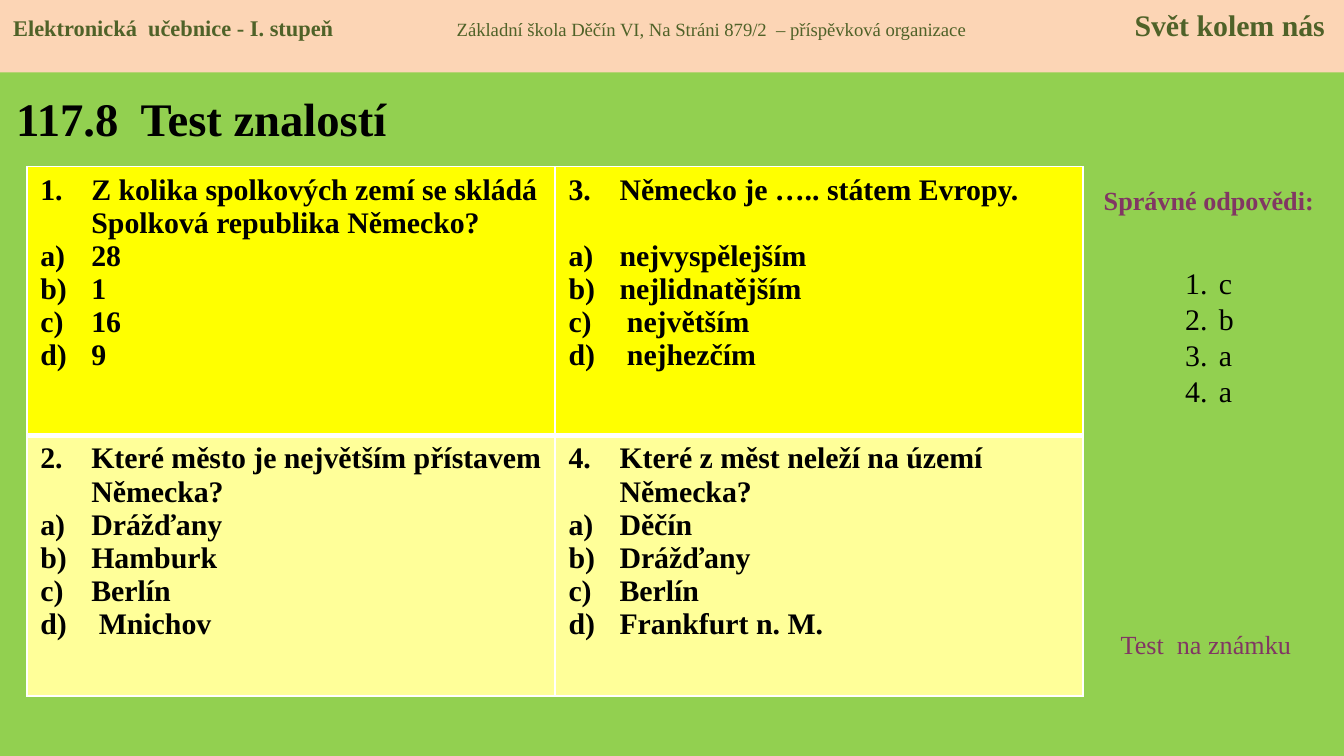
"""Builds a knowledge-test slide about Germany with an answer key."""
from lxml import etree
from pptx import Presentation
from pptx import util as u
from pptx.dml.color import RGBColor
from pptx.enum import shapes, text
from pptx.oxml import ns

FONT = "Times New Roman"
COLORS = {"page": "92D050", "band": "FCD5B5", "band_text": "4F6228", "ink": "000000",
          "accent": "813763", "line": "FFFFFF", "row_1": "FFFF00", "row_2": "FFFF99"}
WIDTH = 10
HEIGHT = WIDTH * 9 / 16

TITLE = "117.8  Test znalostí"
HEADER = [("Elektronická  učebnice - I. stupeň", 12, True),
          ("\tZákladní škola Děčín VI, Na Stráni 879/2  – příspěvková organizace", 10, False),
          ("\tSvět kolem nás", 16, True)]
HEADER_TABS = [(3.3, "l"), (9.76, "r")]
QUESTIONS = [
    ("1.\tZ kolika spolkových zemí se skládá Spolková republika Německo?",
     ["28", "1", "16", "9"]),
    ("Které město je největším přístavem Německa?",
     ["Drážďany", "Hamburk", "Berlín", " Mnichov"]),
    ("3.\tNěmecko je ….. státem Evropy.",
     ["nejvyspělejším", "nejlidnatějším", " největším", " nejhezčím"]),
    ("4.\tKteré z měst neleží na území Německa?",
     ["Děčín", "Drážďany", "Berlín", "Frankfurt n. M."]),
]
AUTO_NUMBERED = {2}
OPTION_GAPS = {3: 17.7}
ANSWERS = ["c", "b", "a", "a"]
SIDE_NOTES = [("Správné odpovědi:", (8.05, 1.32, 1.89, 0.34), True, text.PP_ALIGN.CENTER),
              ("Test  na známku", (8.24, 4.63, 1.57, 0.34), False, text.PP_ALIGN.LEFT)]
TABLE_LEFT, TABLE_TOP, COLUMN_WIDTH = 0.2, 1.24, 3.93
ROW_HEIGHTS = [2.0, 1.94]
QUESTION_INDENT, ANSWER_INDENT = 0.38, 0.25


def inches(*lengths):
    return [u.Inches(length) for length in lengths]


def rgb(name):
    return RGBColor.from_string(COLORS[name])


def style(run, size, color="ink", bold=False):
    run.font.name, run.font.size, run.font.bold = FONT, u.Pt(size), bold
    run.font.color.rgb = rgb(color)


def add_child(parent, tag, **attributes):
    child = etree.SubElement(parent, ns.qn(tag))
    for key, value in attributes.items():
        child.set(key, str(value))
    return child


def hang(paragraph, indent):
    properties = paragraph._p.get_or_add_pPr()
    properties.set("marL", str(u.Inches(indent)))
    properties.set("indent", str(-u.Inches(indent)))
    return properties


def number(paragraph, indent, scheme="arabicPeriod", start=1):
    properties = hang(paragraph, indent)
    add_child(properties, "a:buFont", typeface="+mj-lt")
    add_child(properties, "a:buAutoNum", type=scheme, startAt=start)


def fill_lines(frame, lines):
    frame.text = "\n".join(lines)
    return frame.paragraphs


def add_border(cell, side, points):
    line = add_child(cell._tc.get_or_add_tcPr(), "a:" + side, w=u.Pt(points))
    add_child(add_child(line, "a:solidFill"), "a:srgbClr", val=COLORS["line"])


def add_header(slide):
    band = slide.shapes.add_shape(shapes.MSO_SHAPE.RECTANGLE, *inches(0, 0, WIDTH, 0.54))
    band.shadow.inherit = False
    band.fill.solid()
    band.fill.fore_color.rgb = rgb("band")
    band.line.fill.background()
    band.text_frame.vertical_anchor = text.MSO_ANCHOR.TOP
    paragraph = band.text_frame.paragraphs[0]
    paragraph.alignment = text.PP_ALIGN.LEFT
    tabs = add_child(paragraph._p.get_or_add_pPr(), "a:tabLst")
    for position, side in HEADER_TABS:
        add_child(tabs, "a:tab", pos=u.Inches(position), algn=side)
    for words, size, bold in HEADER:
        run = paragraph.add_run()
        run.text = words
        style(run, size, "band_text", bold)


def add_title(slide):
    title = slide.shapes.title
    title.left, title.top, title.width, title.height = inches(0.02, 0.55, 3.19, 0.65)
    title.text_frame.text = TITLE
    title.text_frame.vertical_anchor = text.MSO_ANCHOR.MIDDLE
    title.text_frame.paragraphs[0].alignment = text.PP_ALIGN.LEFT
    style(title.text_frame.paragraphs[0].runs[0], 25, bold=True)


def add_questions(slide):
    rows, columns = len(ROW_HEIGHTS), len(QUESTIONS) // len(ROW_HEIGHTS)
    table = slide.shapes.add_table(rows, columns, *inches(
        TABLE_LEFT, TABLE_TOP, columns * COLUMN_WIDTH, sum(ROW_HEIGHTS))).table
    for column in table.columns:
        column.width = u.Inches(COLUMN_WIDTH)
    for row, height in zip(table.rows, ROW_HEIGHTS):
        row.height = u.Inches(height)
    for index, (question, options) in enumerate(QUESTIONS):
        column, row = divmod(index, rows)
        cell = table.cell(row, column)
        paragraphs = fill_lines(cell.text_frame, [question] + options)
        if index + 1 in AUTO_NUMBERED:
            number(paragraphs[0], QUESTION_INDENT, start=index + 1)
        else:
            hang(paragraphs[0], QUESTION_INDENT)
        for option in paragraphs[1:]:
            number(option, QUESTION_INDENT, "alphaLcParenR")
        for paragraph in paragraphs:
            style(paragraph.runs[0], 16, bold=True)
        if index + 1 in OPTION_GAPS:
            paragraphs[1].space_before = u.Pt(OPTION_GAPS[index + 1])
        for side, points in [("lnL", 1), ("lnR", 1), ("lnT", 3 if row else 1),
                             ("lnB", 1 if row else 3)]:
            add_border(cell, side, points)
        cell.fill.solid()
        cell.fill.fore_color.rgb = rgb(f"row_{row + 1}")


def add_answers(slide):
    for words, place, bold, alignment in SIDE_NOTES:
        note = slide.shapes.add_textbox(*inches(*place)).text_frame
        note.word_wrap = True
        note.text = words
        note.paragraphs[0].alignment = alignment
        style(note.paragraphs[0].runs[0], 14, "accent", bold)
    key = slide.shapes.add_textbox(*inches(8.72, 1.65, 0.55, 1.99)).text_frame
    key.word_wrap = True
    key.margin_top = u.Inches(0.32)
    for paragraph in fill_lines(key, ANSWERS):
        number(paragraph, ANSWER_INDENT)
        style(paragraph.runs[0], 16)


def main():
    deck = Presentation()
    deck.slide_width, deck.slide_height = inches(WIDTH, HEIGHT)
    slide = deck.slides.add_slide(deck.slide_layouts[5])
    slide.background.fill.solid()
    slide.background.fill.fore_color.rgb = rgb("page")
    add_title(slide)
    add_questions(slide)
    add_answers(slide)
    add_header(slide)
    deck.save("out.pptx")


if __name__ == "__main__":
    main()
